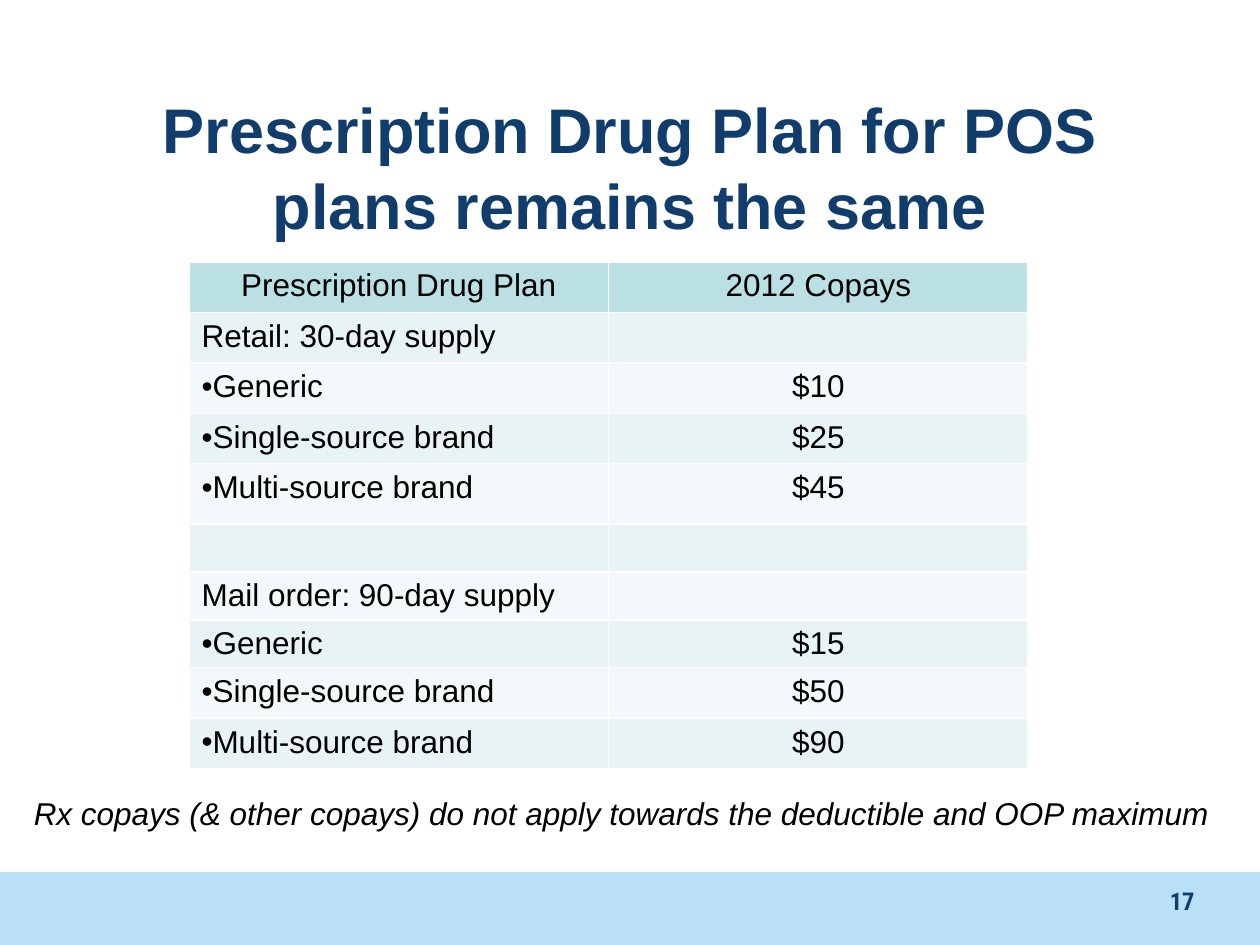
from lxml import etree
from pptx import Presentation
from pptx.dml.color import RGBColor
from pptx.enum import shapes, text
from pptx.oxml import ns
from pptx.util import Inches, Pt

COLORS = {
    "navy": "113D6D",
    "black": "000000",
    "white": "FFFFFF",
    "footer": "B9E0F7",
    "header": "BBE0E3",
    "band_dark": "E7F3F4",
    "band_light": "F3F9FA",
}
BODY = {"name": "Arial", "size": Pt(18)}
TITLE = {"name": "Arial", "size": Pt(36), "bold": True}
NUMBER = {"name": "Roboto Condensed", "size": Pt(14), "bold": True}

CENTER, LEFT, RIGHT = text.PP_ALIGN.CENTER, text.PP_ALIGN.LEFT, text.PP_ALIGN.RIGHT

COPAYS = [
    ("Prescription Drug Plan", "2012 Copays"),
    ("Retail: 30-day supply", ""),
    ("Generic", "$10"),
    ("Single-source brand", "$25"),
    ("Multi-source brand", "$45"),
    ("", ""),
    ("Mail order: 90-day supply", ""),
    ("Generic", "$15"),
    ("Single-source brand", "$50"),
    ("Multi-source brand", "$90"),
]
ROW_HEIGHTS = [0.4] * 4 + [0.48] + [0.38] * 3 + [0.4] * 2


def rgb(color):
    return RGBColor.from_string(COLORS[color])


def write(para, words, style, color, align):
    """Put one formatted span into a paragraph."""
    para.alignment = align
    span = para.add_run()
    span.text = words
    for key, value in style.items():
        setattr(span.font, key, value)
    span.font.color.rgb = rgb(color)


def add_text(page, place, words, style, color, align):
    box = page.shapes.add_textbox(*map(Inches, place))
    box.text_frame.word_wrap = True
    write(box.text_frame.paragraphs[0], words, style, color, align)


def add_footer_band(page):
    band = page.shapes.add_shape(
        shapes.MSO_SHAPE.RECTANGLE, Inches(0), Inches(6.92), Inches(10), Inches(0.58))
    band.shadow.inherit = False
    band.fill.solid()
    band.fill.fore_color.rgb = rgb("footer")
    band.line.fill.background()


def set_borders(cell):
    """Draw white cell borders; they must come before the cell fill."""
    properties = cell._tc.get_or_add_tcPr()
    for side in "LRTB":
        line = etree.SubElement(properties, ns.qn(f"a:ln{side}"), w=str(Pt(1)))
        fill = etree.SubElement(line, ns.qn("a:solidFill"))
        etree.SubElement(fill, ns.qn("a:srgbClr"), val=COLORS["white"])


def add_bullet(para):
    properties = para._p.get_or_add_pPr()
    etree.SubElement(properties, ns.qn("a:buFont"), typeface=BODY["name"])
    etree.SubElement(properties, ns.qn("a:buChar"), char="•")


def add_copay_table(page):
    frame = page.shapes.add_table(
        len(COPAYS), 2, Inches(1.5), Inches(2.08), Inches(6.66), Inches(sum(ROW_HEIGHTS)))
    table = frame.table
    for column in table.columns:
        column.width = Inches(3.33)
    for r, (values, height) in enumerate(zip(COPAYS, ROW_HEIGHTS)):
        table.rows[r].height = Inches(height)
        is_header = r == 0
        band = "header" if is_header else "band_dark" if r % 2 else "band_light"
        for c, value in enumerate(values):
            cell = table.cell(r, c)
            set_borders(cell)
            cell.fill.solid()
            cell.fill.fore_color.rgb = rgb(band)
            cell.margin_bottom = Inches(0.02)
            para = cell.text_frame.paragraphs[0]
            # Only drug types, the rows with a copay, are bulleted
            if c == 0 and values[1] and not is_header:
                add_bullet(para)
            write(para, value, BODY, "black", CENTER if is_header or c else LEFT)


def main():
    deck = Presentation()
    deck.slide_width, deck.slide_height = Inches(10), Inches(7.5)
    page = deck.slides.add_slide(deck.slide_layouts[6])

    # Footer and page number
    add_footer_band(page)
    add_text(page, (7.25, 6.98, 2.33, 0.52), "17", NUMBER, "navy", RIGHT)

    # Title, table and footnote
    add_text(page, (0.5, 0.67, 9, 1.25),
             "Prescription Drug Plan for POS plans remains the same",
             TITLE, "navy", CENTER)
    add_copay_table(page)
    add_text(page, (0.17, 6.25, 9.67, 0.4),
             "Rx copays (& other copays) do not apply towards the deductible and OOP maximum",
             {**BODY, "italic": True}, "black", LEFT)

    deck.save("out.pptx")


if __name__ == "__main__":
    main()
